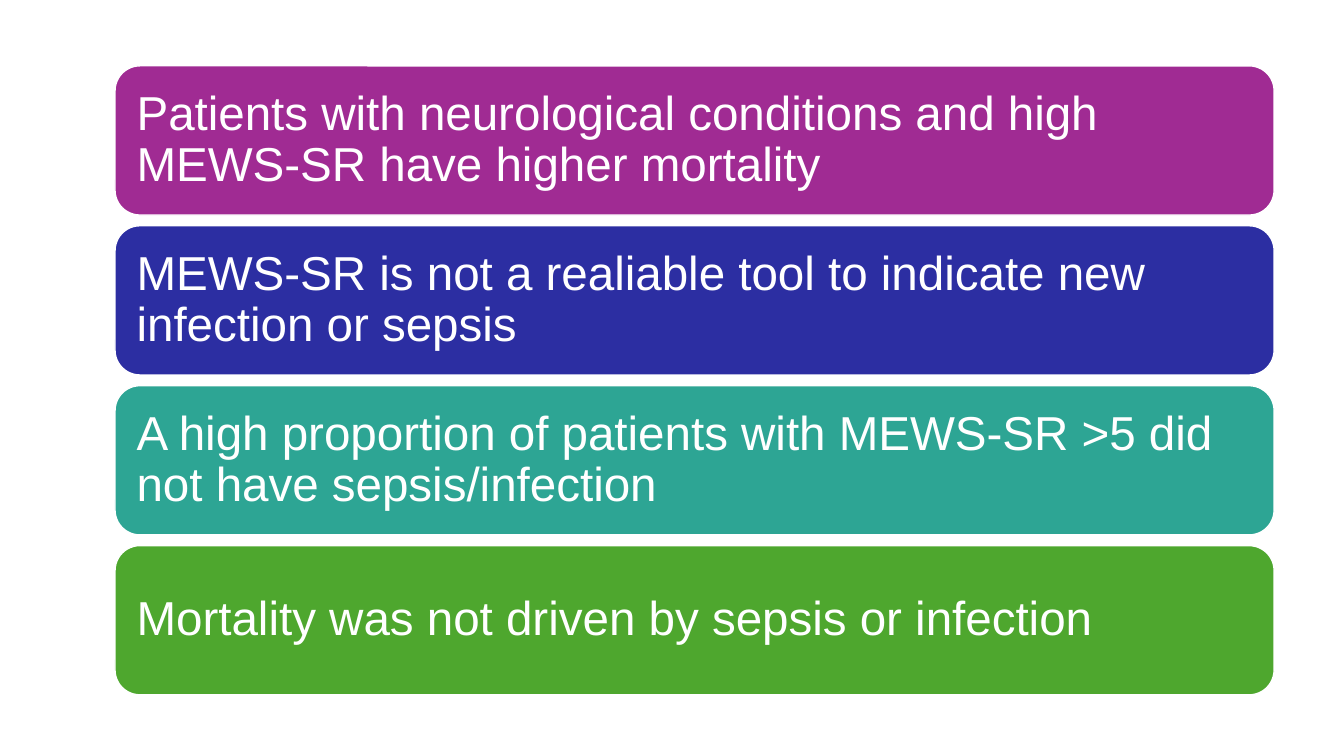
from pptx import Presentation
from pptx.dml.color import RGBColor
from pptx.enum.shapes import MSO_SHAPE
from pptx.enum.text import MSO_ANCHOR, PP_ALIGN
from pptx.util import Cm, Pt

COLORS = {
    "white": "FFFFFF",
    "purple": "A02B93",
    "blue": "2C2EA2",
    "teal": "2DA594",
    "green": "4EA72E",
}
CONCLUSIONS = [
    ("purple", "Patients with neurological conditions and high MEWS-SR have higher mortality"),
    ("blue", "MEWS-SR is not a realiable tool to indicate new infection or sepsis"),
    ("teal", "A high proportion of patients with MEWS-SR >5 did not have sepsis/infection"),
    ("green", "Mortality was not driven by sepsis or infection"),
]
LEFT, TOP, WIDTH, HEIGHT, PITCH = 2.9, 1.66, 29.21, 3.76, 4.03
INSET = Cm(0.36)

prs = Presentation()
prs.slide_width = Cm(33.87)
prs.slide_height = Cm(19.05)
s = prs.slides.add_slide(prs.slide_layouts[6])
white = RGBColor.from_string(COLORS["white"])

for i, (color, text) in enumerate(CONCLUSIONS):
    sp = s.shapes.add_shape(
        MSO_SHAPE.ROUNDED_RECTANGLE,
        Cm(LEFT), Cm(TOP + i * PITCH), Cm(WIDTH), Cm(HEIGHT),
    )
    sp.name = f"Conclusion {i + 1}"
    sp.shadow.inherit = False
    sp.fill.solid()
    sp.fill.fore_color.rgb = RGBColor.from_string(COLORS[color])
    sp.line.color.rgb = white
    sp.line.width = Pt(1)

    tf = sp.text_frame
    tf.word_wrap = True
    tf.vertical_anchor = MSO_ANCHOR.MIDDLE
    tf.margin_left = tf.margin_right = tf.margin_top = tf.margin_bottom = INSET
    p = tf.paragraphs[0]
    p.text = text
    p.alignment = PP_ALIGN.LEFT
    p.line_spacing = 0.9
    p.font.name = "Arial"
    p.font.size = Pt(34)
    p.font.color.rgb = white

prs.save("out.pptx")
